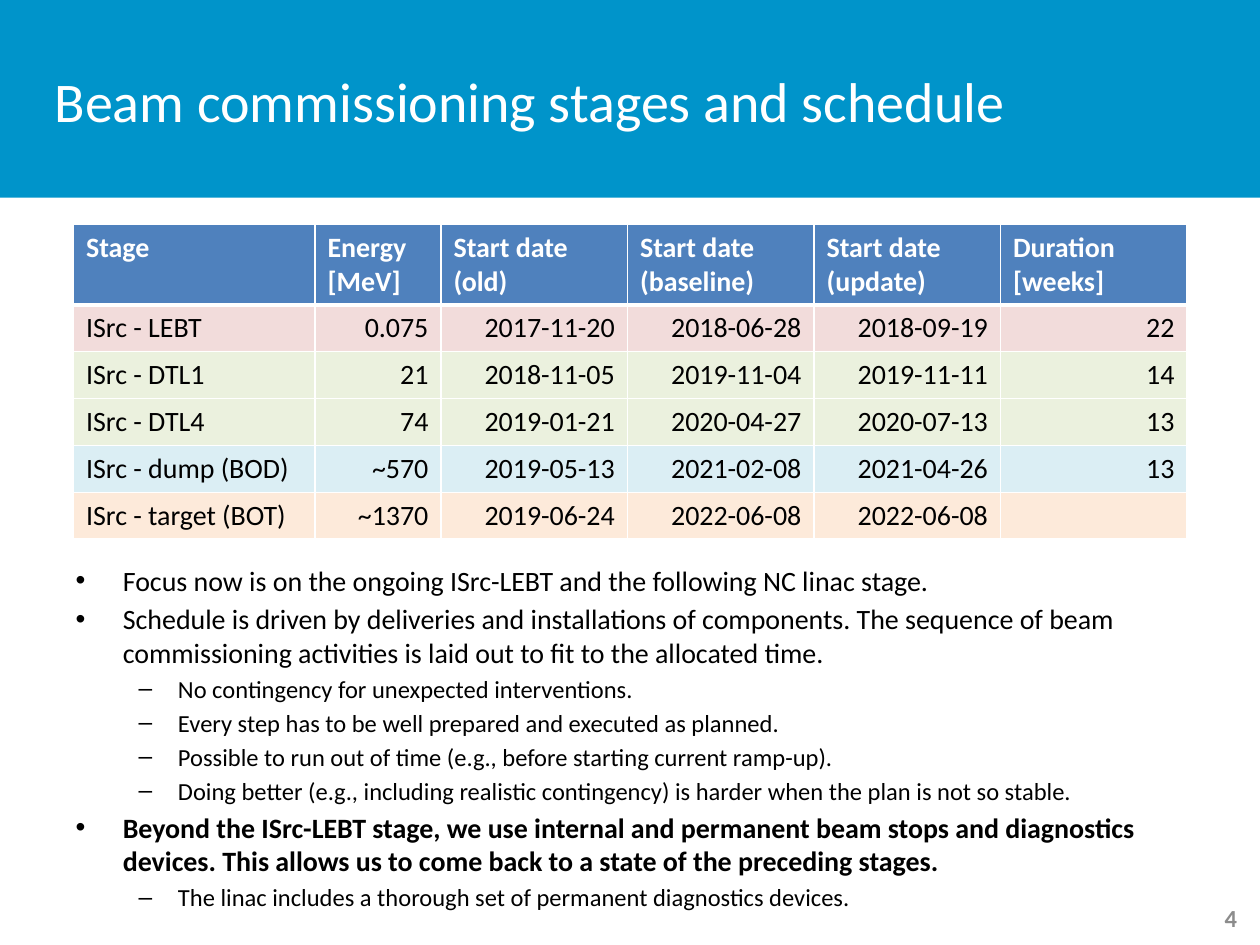
from lxml.etree import SubElement
from pptx import Presentation
from pptx.dml.color import RGBColor
from pptx.enum.shapes import MSO_SHAPE
from pptx.enum.text import MSO_ANCHOR, MSO_AUTO_SIZE, PP_ALIGN
from pptx.oxml.ns import qn
from pptx.util import Pt

FONT = "Calibri"
COLORS = {
    "band": "0094CA", "white": "FFFFFF", "black": "000000", "number": "8C8C8C",
    "header": "4F81BD", "red": "F2DCDB", "green": "EBF1DE",
    "blue": "DBEEF4", "orange": "FDEADA",
}

COLUMN_WIDTHS = [138, 72, 106.6, 106.6, 106.6, 106.6]
HEADER_HEIGHT, ROW_HEIGHT = 45.8, 26.8
HEADER = [["Stage"], ["Energy [MeV]"], ["Start date", "(old)"],
          ["Start date", "(baseline)"], ["Start date", "(update)"],
          ["Duration", "[weeks]"]]
STAGES = [
    ("red", ["ISrc - LEBT", "0.075", "2017-11-20", "2018-06-28", "2018-09-19", "22"]),
    ("green", ["ISrc - DTL1", "21", "2018-11-05", "2019-11-04", "2019-11-11", "14"]),
    ("green", ["ISrc - DTL4", "74", "2019-01-21", "2020-04-27", "2020-07-13", "13"]),
    ("blue", ["ISrc - dump (BOD)", "~570", "2019-05-13", "2021-02-08", "2021-04-26", "13"]),
    ("orange", ["ISrc - target (BOT)", "~1370", "2019-06-24", "2022-06-08", "2022-06-08", ""]),
]

# Level, bold, text
POINTS = [
    (0, False, "Focus now is on the ongoing ISrc-LEBT and the following NC linac stage."),
    (0, False, "Schedule is driven by deliveries and installations of components. "
               "The sequence of beam commissioning activities is laid out to fit "
               "to the allocated time."),
    (1, False, "No contingency for unexpected interventions."),
    (1, False, "Every step has to be well prepared and executed as planned."),
    (1, False, "Possible to run out of time (e.g., before starting current ramp-up)."),
    (1, False, "Doing better (e.g., including realistic contingency) is harder "
               "when the plan is not so stable."),
    (0, True, "Beyond the ISrc-LEBT stage, we use internal and permanent beam stops "
              "and diagnostics devices. This allows us to come back to a state of "
              "the preceding stages."),
    (1, False, "The linac includes a thorough set of permanent diagnostics devices."),
]
# Per level: bullet, text size, left margin, hanging indent, space before
LEVELS = [("•", 16, 27, -27, 3), ("–", 14, 58.5, -22.5, 2.6)]


def rgb(name):
    return RGBColor.from_string(COLORS[name])


def place(shape, left, top, width, height):
    shape.left, shape.top = Pt(left), Pt(top)
    shape.width, shape.height = Pt(width), Pt(height)


def add_run(p, text, size, color, bold=False):
    r = p.add_run()
    r.text = text
    r.font.name, r.font.size, r.font.bold = FONT, Pt(size), bold
    r.font.color.rgb = rgb(color)


def add_title(s, text):
    title = s.shapes.title
    place(title, 24, 12, 562, 90)
    tf = title.text_frame
    tf.auto_size = MSO_AUTO_SIZE.NONE
    tf.vertical_anchor = MSO_ANCHOR.MIDDLE
    p = tf.paragraphs[0]
    p.alignment = PP_ALIGN.LEFT
    add_run(p, text, 32, "white")

    # Band behind the title
    band = s.shapes.add_shape(MSO_SHAPE.RECTANGLE, 0, 0, Pt(720), Pt(113))
    band.shadow.inherit = False
    band.fill.solid()
    band.fill.fore_color.rgb = rgb("band")
    band.line.fill.background()
    title._element.addprevious(band._element)


def add_points(s):
    body = s.placeholders[1]
    place(body, 36, 318.2, 648, 216)
    tf = body.text_frame
    tf.auto_size = MSO_AUTO_SIZE.NONE
    for i, (level, bold, text) in enumerate(POINTS):
        p = tf.paragraphs[0] if i == 0 else tf.add_paragraph()
        bullet, size, margin, indent, before = LEVELS[level]
        p.level = level
        p.space_before = Pt(before if i else 0)
        pPr = p._p.get_or_add_pPr()
        pPr.set("marL", str(Pt(margin)))
        pPr.set("indent", str(Pt(indent)))
        SubElement(pPr, qn("a:buFont")).set("typeface", "Arial")
        SubElement(pPr, qn("a:buChar")).set("char", bullet)
        add_run(p, text, size, "black", bold)


def add_number(s, text):
    sp = s.shapes.add_textbox(Pt(546), Pt(510), Pt(168), Pt(28.8))
    tf = sp.text_frame
    tf.word_wrap = True
    tf.vertical_anchor = MSO_ANCHOR.MIDDLE
    p = tf.paragraphs[0]
    p.alignment = PP_ALIGN.RIGHT
    add_run(p, text, 14, "number", True)


def set_borders(cell, top, bottom):
    tcPr = cell._tc.get_or_add_tcPr()
    for side, width in (("L", 1), ("R", 1), ("T", top), ("B", bottom)):
        ln = SubElement(tcPr, qn(f"a:ln{side}"))
        ln.set("w", str(Pt(width)))
        fill = SubElement(ln, qn("a:solidFill"))
        SubElement(fill, qn("a:srgbClr")).set("val", COLORS["white"])


def fill_cell(cell, lines, fill, color, bold, align, top, bottom):
    set_borders(cell, top, bottom)
    cell.fill.solid()
    cell.fill.fore_color.rgb = rgb(fill)
    tf = cell.text_frame
    for i, line in enumerate(lines):
        p = tf.paragraphs[0] if i == 0 else tf.add_paragraph()
        p.alignment = align
        if line:
            add_run(p, line, 16, color, bold)
        else:
            # An empty cell keeps the text height of its row
            p._p.get_or_add_endParaRPr().set("sz", "1600")


def add_schedule(s):
    height = HEADER_HEIGHT + len(STAGES) * ROW_HEIGHT
    table = s.shapes.add_table(len(STAGES) + 1, len(HEADER), Pt(42), Pt(128.4),
                               Pt(sum(COLUMN_WIDTHS)), Pt(height)).table
    for column, width in zip(table.columns, COLUMN_WIDTHS):
        column.width = Pt(width)
    for i, row in enumerate(table.rows):
        row.height = Pt(ROW_HEIGHT if i else HEADER_HEIGHT)

    for c, lines in enumerate(HEADER):
        fill_cell(table.cell(0, c), lines, "header", "white", True,
                  PP_ALIGN.LEFT, 1, 3)
    for i, (fill, values) in enumerate(STAGES, 1):
        for c, value in enumerate(values):
            align = PP_ALIGN.RIGHT if c else PP_ALIGN.LEFT
            fill_cell(table.cell(i, c), [value], fill, "black", False,
                      align, 3 if i == 1 else 1, 1)


def main():
    prs = Presentation()
    prs.slide_width, prs.slide_height = Pt(720), Pt(540)
    s = prs.slides.add_slide(prs.slide_layouts[1])
    add_title(s, "Beam commissioning stages and schedule")
    add_points(s)
    add_number(s, "4")
    add_schedule(s)
    prs.save("out.pptx")


if __name__ == "__main__":
    main()
